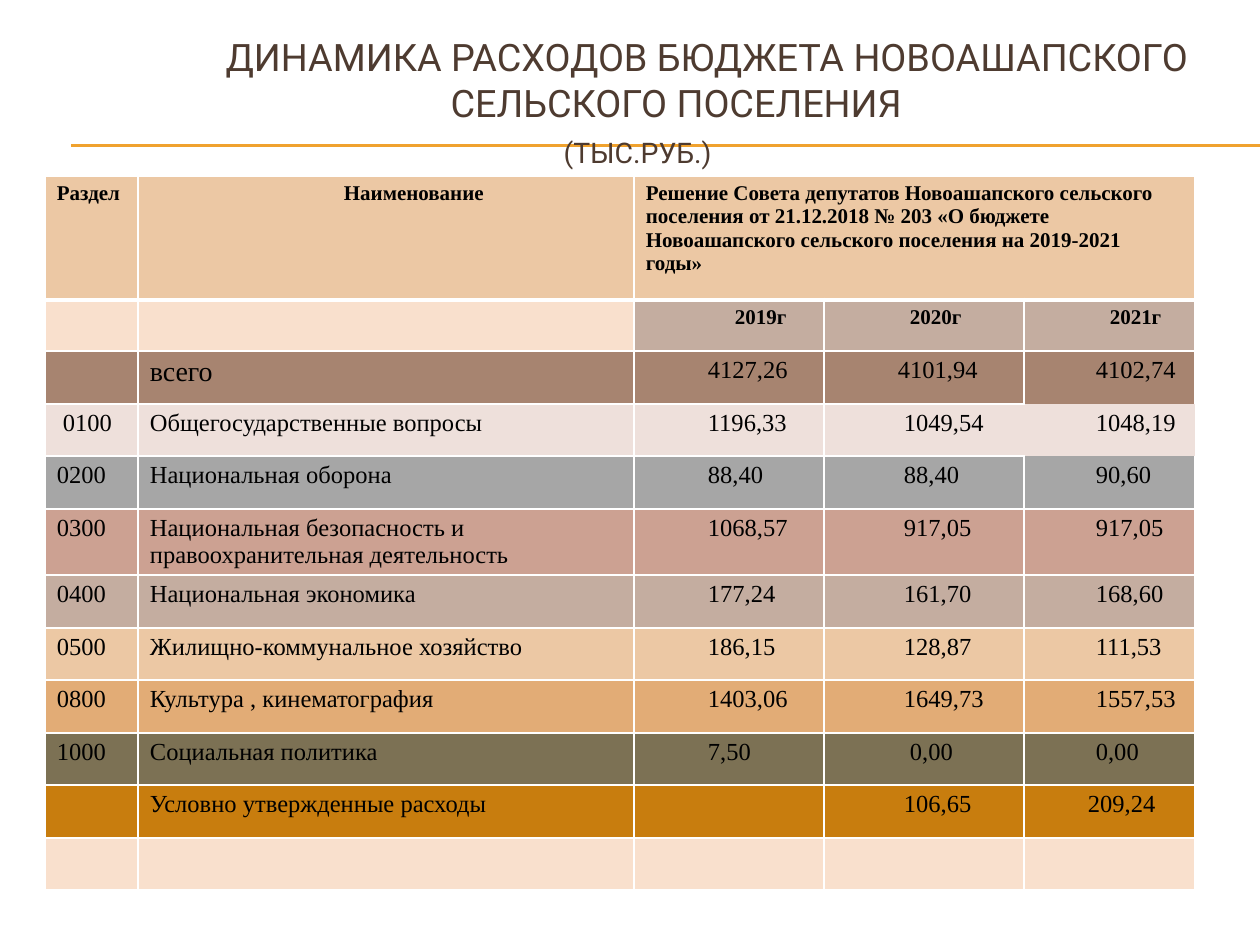
from lxml.etree import SubElement
from pptx import Presentation
from pptx.dml.color import RGBColor
from pptx.enum.shapes import MSO_CONNECTOR as Connector
from pptx.enum.text import MSO_ANCHOR as Anchor, MSO_AUTO_SIZE as AutoSize, PP_ALIGN as Align
from pptx.oxml.ns import qn
from pptx.util import Pt

PX = 914400 // 126
BLACK = RGBColor(0x00, 0x00, 0x00)
BROWN = RGBColor(0x4E, 0x3B, 0x30)
GOLD = RGBColor(0xF0, 0xA2, 0x2E)
SAND = RGBColor(0xEC, 0xC8, 0xA4)
PEACH = RGBColor(0xF9, 0xE0, 0xCD)
TAUPE = RGBColor(0xC4, 0xAD, 0xA0)
COCOA = RGBColor(0xA7, 0x84, 0x70)
BLUSH = RGBColor(0xEE, 0xE0, 0xDB)
GRAY = RGBColor(0xA6, 0xA6, 0xA6)
ROSE = RGBColor(0xCC, 0xA1, 0x92)
APRICOT = RGBColor(0xE2, 0xAC, 0x76)
OLIVE = RGBColor(0x7C, 0x71, 0x54)
OCHRE = RGBColor(0xC8, 0x7D, 0x0E)


def add_span(para, text, font, size, color, bold=False):
    span = para.add_run()
    span.text = text
    span.font.name = font
    span.font.size = Pt(size)
    span.font.color.rgb = color
    span.font.bold = bold


def set_borders(cell, widths):
    """Draw white borders; widths maps L, R, T, B to points, 0 for no line."""
    props = cell._tc.get_or_add_tcPr()
    for position, (side, width) in enumerate(widths.items()):
        line = SubElement(props, qn(f"a:ln{side}"), w=str(Pt(width)))
        if width:
            fill = SubElement(line, qn("a:solidFill"))
            SubElement(fill, qn("a:srgbClr"), val="FFFFFF")
        else:
            SubElement(line, qn("a:noFill"))
        props.insert(position, line)


deck = Presentation()
deck.slide_width = 1260 * PX
deck.slide_height = 945 * PX
page = deck.slides.add_slide(deck.slide_layouts[5])

# Double rule behind the title
for y in (145, 146):
    rule = page.shapes.add_connector(Connector.STRAIGHT, 71 * PX, y * PX, 1260 * PX, y * PX)
    rule.line.color.rgb = GOLD
    rule.line.width = Pt(0.75)
    SubElement(rule._element.spPr, qn("a:effectLst"))

# Title: each line has its own indent
title = page.shapes.title
page.shapes._spTree.append(title._element)
title.left, title.top, title.width, title.height = 35 * PX, 37 * PX, 1181 * PX, 129 * PX
frame = title.text_frame
frame.auto_size = AutoSize.NONE
frame.word_wrap = True
frame.vertical_anchor = Anchor.MIDDLE
title_lines = [
    ("ДИНАМИКА РАСХОДОВ БЮДЖЕТА НОВОАШАПСКОГО", 178, 21.6, 0),
    ("СЕЛЬСКОГО ПОСЕЛЕНИЯ", 403, 21.6, 0),
    ("(ТЫС.РУБ.)", 516, 16.2, 6),
]
for number, (text, indent, size, gap) in enumerate(title_lines):
    para = frame.add_paragraph() if number else frame.paragraphs[0]
    para.alignment = Align.LEFT
    para.space_before = Pt(gap)
    props = para._p.get_or_add_pPr()
    props.set("marL", str(indent * PX))
    props.set("indent", "0")
    add_span(para, text, "Roboto", size, BROWN)

# Budget table
DECISION = ("Решение Совета депутатов Новоашапского сельского поселения от 21.12.2018 № 203 "
            "«О бюджете Новоашапского сельского поселения на 2019-2021 годы»")
rows = [
    (124, SAND, ["Раздел", "Наименование", DECISION, "", ""]),
    (51, PEACH, ["", "", "2019г", "2020г", "2021г"]),
    (53, COCOA, ["", "всего", "4127,26", "4101,94", "4102,74"]),
    (52, BLUSH, ["0100", "Общегосударственные вопросы", "1196,33", "1049,54", "1048,19"]),
    (53, GRAY, ["0200", "Национальная оборона", "88,40", "88,40", "90,60"]),
    (66, ROSE, ["0300", "Национальная безопасность и правоохранительная деятельность",
                "1068,57", "917,05", "917,05"]),
    (53, TAUPE, ["0400", "Национальная экономика", "177,24", "161,70", "168,60"]),
    (52, SAND, ["0500", "Жилищно-коммунальное хозяйство", "186,15", "128,87", "111,53"]),
    (53, APRICOT, ["0800", "Культура , кинематография", "1403,06", "1649,73", "1557,53"]),
    (52, OLIVE, ["1000", "Социальная политика", "7,50", "0,00", "0,00"]),
    (53, OCHRE, ["", "Условно утвержденные расходы", "", "106,65", "209,24"]),
    (52, PEACH, ["", "", "", "", ""]),
]
column_widths = [93, 496, 190, 200, 171]
header_indents = [[12, 206, 12, 12, 12], [12, 12, 101, 86, 86]]
value_indents = [12, 12, 74, 80, 72]
special_indents = {(2, 3): 74, (3, 0): 18, (9, 3): 86, (10, 4): 64}
open_sides = {(2, 4): "B", (3, 3): "R", (3, 4): "LRTB", (4, 4): "T"}

table = page.shapes.add_table(len(rows), len(column_widths), 45 * PX, 176 * PX,
                              sum(column_widths) * PX, 714 * PX).table
table.first_row = table.horz_banding = False
table._tbl.tblPr.find(qn("a:tableStyleId")).text = "{2D5ABB26-0587-4C30-8999-92F81FD0307C}"
for column, width in zip(table.columns, column_widths):
    column.width = width * PX
table.cell(0, 2).merge(table.cell(0, 4))

for r, (height, color, texts) in enumerate(rows):
    table.rows[r].height = height * PX
    is_header = r < 2
    indents = header_indents[r] if is_header else value_indents
    for c, text in enumerate(texts):
        cell = table.cell(r, c)
        cell.fill.solid()
        cell.fill.fore_color.rgb = TAUPE if r == 1 and c > 1 else color
        cell.margin_left = special_indents.get((r, c), indents[c]) * PX
        cell.margin_right = (6 if c > 2 else 12) * PX
        cell.margin_top = cell.margin_bottom = 6 * PX
        widths = {"L": 1, "R": 1, "T": 3 if r == 1 else 1, "B": 3 if r == 0 else 1}
        for side in open_sides.get((r, c), ""):
            widths[side] = 0
        set_borders(cell, widths)
        if text:
            size = 12 if is_header else 16 if text == "всего" else 14
            add_span(cell.text_frame.paragraphs[0], text, "Times New Roman", size, BLACK, is_header)

deck.save("out.pptx")
